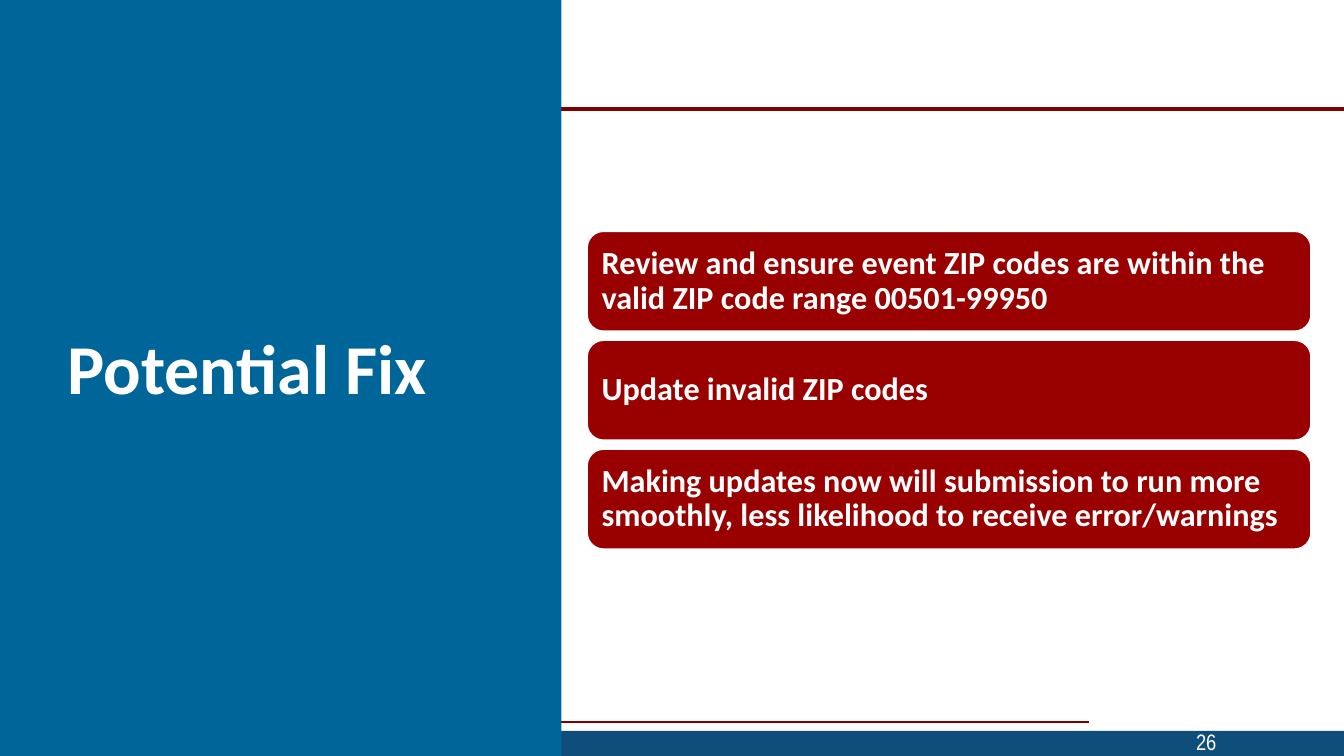
from lxml import etree
from pptx import Presentation
from pptx.dml.color import RGBColor
from pptx.enum.shapes import MSO_CONNECTOR, MSO_SHAPE
from pptx.enum.text import MSO_ANCHOR, PP_ALIGN
from pptx.oxml.ns import qn
from pptx.util import Pt

COLORS = {"panel": "006699", "footer": "0F4D7B", "rule": "800000",
          "card": "990000", "white": "FFFFFF"}
WIDTH, HEIGHT = 960, 540
FIXES = [
    "Review and ensure event ZIP codes are within the valid ZIP code range 00501-99950",
    "Update invalid ZIP codes",
    "Making updates now will submission to run more smoothly, less likelihood to receive error/warnings",
]


def rgb(name):
    """Return the named palette colour."""
    return RGBColor.from_string(COLORS[name])


def add_block(s, kind, box, fill, line=None):
    """Add a filled shape, outlined if a line colour is given."""
    sp = s.shapes.add_shape(kind, *map(Pt, box))
    sp.shadow.inherit = False
    sp.fill.solid()
    sp.fill.fore_color.rgb = rgb(fill)
    if line:
        sp.line.color.rgb = rgb(line)
        sp.line.width = Pt(1.5)
    else:
        sp.line.fill.background()
    return sp


def add_rule(s, x1, x2, y, width):
    """Draw a horizontal rule."""
    c = s.shapes.add_connector(MSO_CONNECTOR.STRAIGHT, Pt(x1), Pt(y), Pt(x2), Pt(y))
    c.line.color.rgb = rgb("rule")
    c.line.width = Pt(width)
    etree.SubElement(c._element.spPr, qn("a:effectLst"))


def write(sp, text, font, align=PP_ALIGN.LEFT, spacing=1.0, inset=7.2):
    """Write one vertically centred white paragraph into a shape."""
    tf = sp.text_frame
    frame = {"word_wrap": True, "vertical_anchor": MSO_ANCHOR.MIDDLE,
             "margin_left": Pt(inset), "margin_right": Pt(inset)}
    for key, value in frame.items():
        setattr(tf, key, value)
    p = tf.paragraphs[0]
    p.alignment = align
    p.line_spacing = spacing
    r = p.add_run()
    r.text = text
    r.font.color.rgb = rgb("white")
    for key, value in font.items():
        setattr(r.font, key, value)


def add_frame(s, box):
    """Draw the rules, the footer bar and the page number."""
    x, y, w, h = box
    add_rule(s, x + 88, x + 777.6, y + 516, 1.5)
    add_block(s, MSO_SHAPE.RECTANGLE, (x, y + h - 18, w, 18), "footer")
    add_rule(s, x, x + w, y + 77.8, 3)
    number = s.shapes.add_textbox(Pt(x + 660), Pt(y + 515), Pt(216), Pt(28.8))
    write(number, "26", {"name": "Arial Narrow", "size": Pt(16)}, PP_ALIGN.RIGHT)


def add_title_panel(s, box):
    """Draw the side panel with the slide title."""
    x, y, w, h = box
    add_block(s, MSO_SHAPE.RECTANGLE, box, "panel")
    title = s.shapes.add_textbox(Pt(x + 41), Pt(y + 49), Pt(w - 101), Pt(h - 106.5))
    write(title, "Potential Fix",
          {"name": "Calibri", "size": Pt(50), "bold": True}, spacing=0.9)


def add_cards(s, box, texts, gap=6):
    """Stack equal rounded cards in the box."""
    x, y, w, h = box
    card_h = (h - gap * (len(texts) - 1)) / len(texts)
    for i, text in enumerate(texts):
        card = (x, y + i * (card_h + gap), w, card_h)
        sp = add_block(s, MSO_SHAPE.ROUNDED_RECTANGLE, card, "card", "white")
        write(sp, text, {"name": "Calibri", "size": Pt(23), "bold": True},
              spacing=0.9, inset=7.2)


def main():
    """Build and save the slide."""
    prs = Presentation()
    prs.slide_width, prs.slide_height = Pt(WIDTH), Pt(HEIGHT)
    s = prs.slides.add_slide(prs.slide_layouts[6])
    add_frame(s, (0, 0, WIDTH, HEIGHT))
    add_title_panel(s, (0, 0, 401, HEIGHT))
    add_cards(s, (419.2, 165, 517.5, 227.5), FIXES)
    prs.save("out.pptx")


if __name__ == "__main__":
    main()
